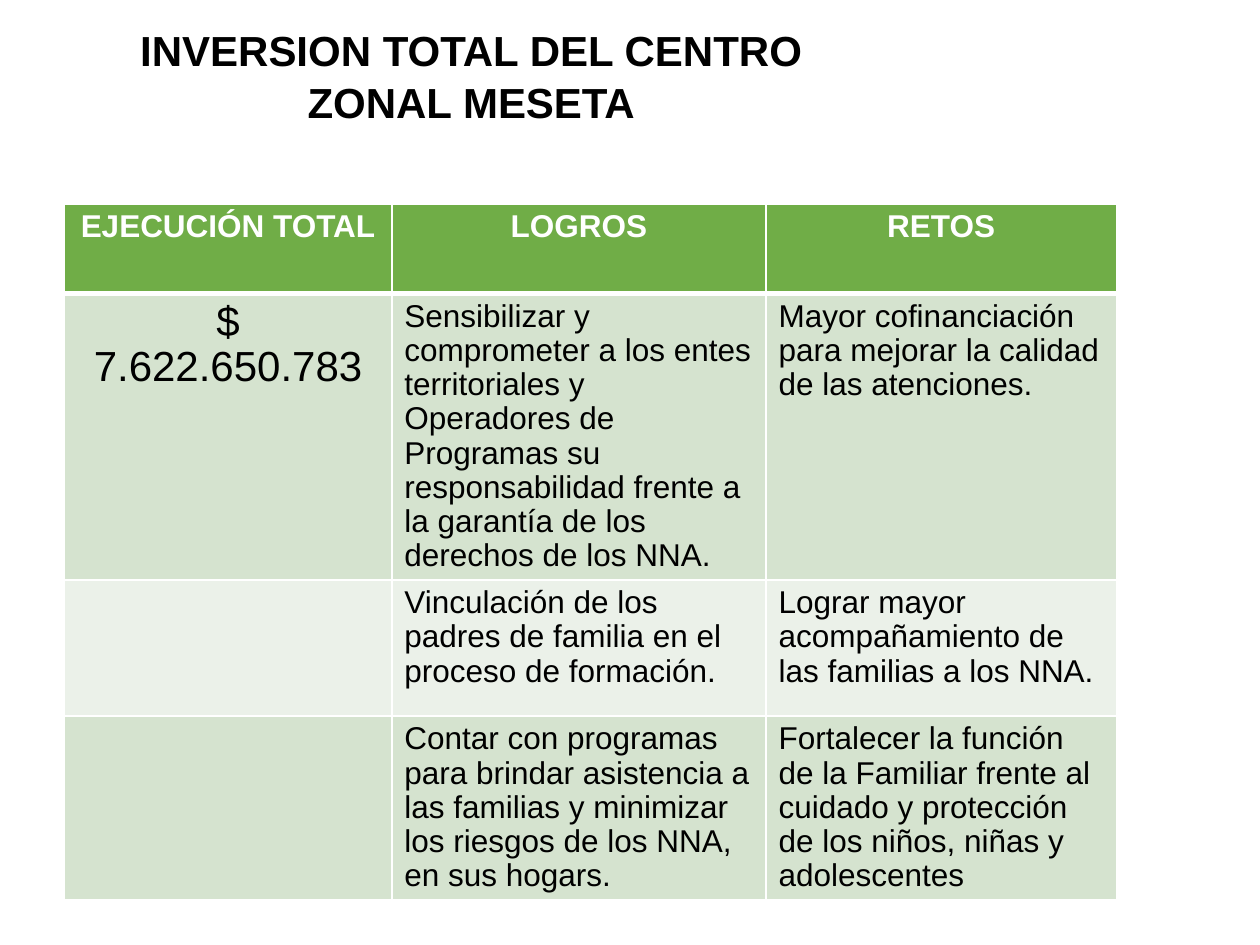
from lxml.etree import SubElement
from pptx import Presentation
from pptx.dml.color import RGBColor
from pptx.enum.text import PP_ALIGN
from pptx.oxml.ns import qn
from pptx.util import Inches, Pt

COLORS = {"header": "70AD47", "band": "D5E3CF", "light": "EBF1E9",
          "white": "FFFFFF", "black": "000000"}
COLS = [2.6, 2.97, 2.78]
ROWS = [0.71, 1.08, 1.08, 1.08]
CELLS = [
    ["EJECUCIÓN TOTAL", "LOGROS", "RETOS"],
    ["$ 7.622.650.783",
     "Sensibilizar y comprometer a los entes territoriales y Operadores de "
     "Programas su responsabilidad frente a la garantía de los derechos de los NNA.",
     "Mayor cofinanciación para mejorar la calidad de las atenciones."],
    ["", "Vinculación de los padres de familia en el proceso de formación.",
     "Lograr mayor acompañamiento de las familias a los NNA."],
    ["", "Contar con programas para brindar asistencia a las familias y minimizar "
     "los riesgos de los NNA, en sus hogars.",
     "Fortalecer la función de la Familiar frente al cuidado y protección de los "
     "niños, niñas y adolescentes"],
]


def write(tf, text, size=18, color="black", bold=False, center=False, spacing=0.97):
    """Put one formatted paragraph in a text frame."""
    p = tf.paragraphs[0]
    p.alignment = PP_ALIGN.CENTER if center else PP_ALIGN.LEFT
    p.line_spacing = spacing
    r = p.add_run()
    r.text = text
    r.font.name, r.font.size, r.font.bold = "Arial", Pt(size), bold
    r.font.color.rgb = RGBColor.from_string(COLORS[color])


def style_cell(cell, fill, top=1, bottom=1):
    """Give a cell white borders and a solid fill."""
    tcPr = cell._tc.get_or_add_tcPr()
    for side, width in (("L", 1), ("R", 1), ("T", top), ("B", bottom)):
        ln = SubElement(tcPr, qn(f"a:ln{side}"), w=str(Pt(width)))
        solid = SubElement(ln, qn("a:solidFill"))
        SubElement(solid, qn("a:srgbClr"), val=COLORS["white"])
    cell.fill.solid()
    cell.fill.fore_color.rgb = RGBColor.from_string(COLORS[fill])


def add_title(s, text):
    """Add the centred slide title."""
    tf = s.shapes.add_textbox(Inches(0.67), Inches(0.13),
                              Inches(6.14), Inches(0.91)).text_frame
    tf.word_wrap = True
    write(tf, text, size=24, bold=True, center=True, spacing=1.04)


def add_summary_table(s):
    """Add the table of execution, achievements and challenges."""
    table = s.shapes.add_table(len(ROWS), len(COLS), Inches(0.51), Inches(1.62),
                               Inches(sum(COLS)), Inches(sum(ROWS))).table
    for col, width in zip(table.columns, COLS):
        col.width = Inches(width)
    for i, (row, height) in enumerate(zip(table.rows, ROWS)):
        row.height = Inches(height)
        header = i == 0
        fill = "header" if header else "band" if i % 2 else "light"
        for j, (cell, text) in enumerate(zip(row.cells, CELLS[i])):
            style_cell(cell, fill, top=3 if i == 1 else 1, bottom=3 if header else 1)
            if text:
                write(cell.text_frame, text, bold=header, center=header or j == 0,
                      size=24 if j == 0 and not header else 18,
                      color="white" if header else "black")


def main():
    """Build and save the slide."""
    prs = Presentation()
    prs.slide_width, prs.slide_height = Inches(10), Inches(7.5)
    s = prs.slides.add_slide(prs.slide_layouts[6])
    add_summary_table(s)
    add_title(s, "INVERSION TOTAL DEL CENTRO ZONAL MESETA")
    prs.save("out.pptx")


if __name__ == "__main__":
    main()
